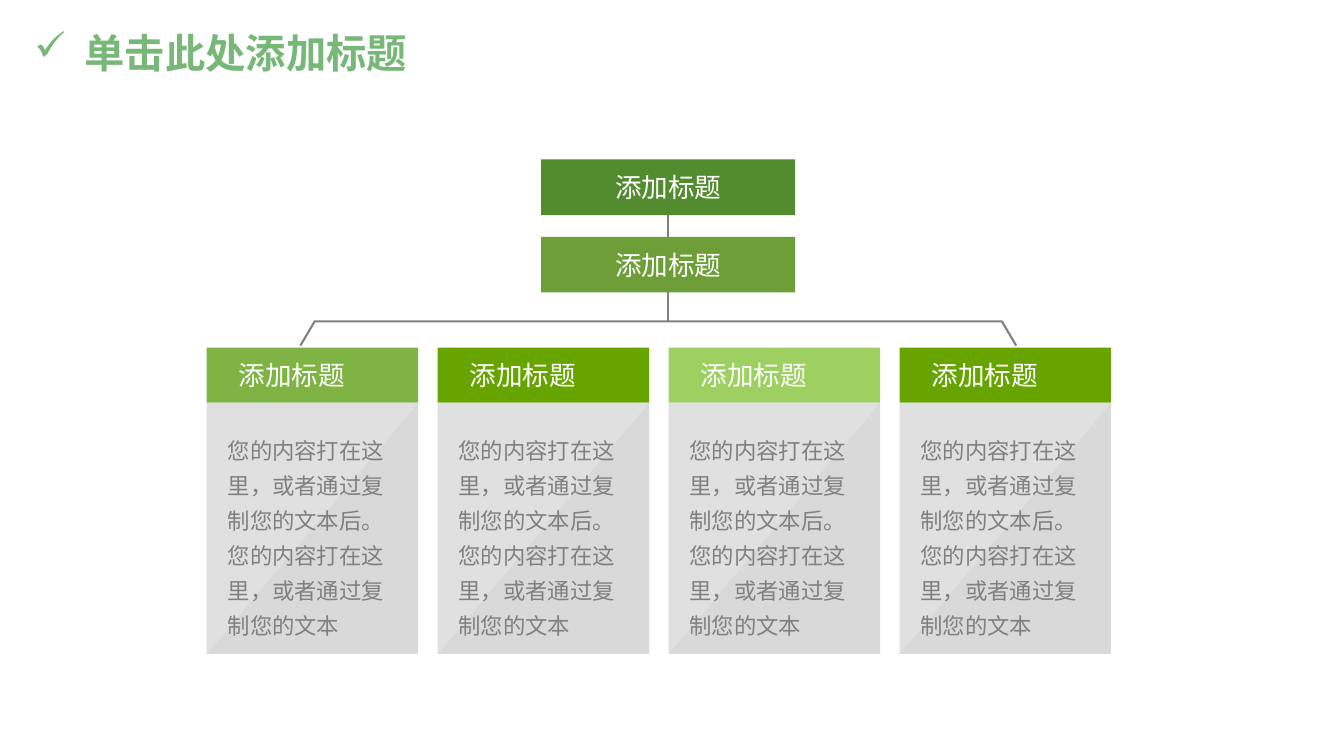
from dataclasses import dataclass

from lxml.etree import SubElement
from pptx import Presentation
from pptx.dml.color import RGBColor
from pptx.enum.shapes import MSO_CONNECTOR, MSO_SHAPE
from pptx.enum.text import MSO_ANCHOR, MSO_AUTO_SIZE, PP_ALIGN
from pptx.oxml.ns import qn
from pptx.util import Cm, Pt


@dataclass(frozen=True)
class Theme:
    title: str = "77B878"
    levels: tuple = ("538C2E", "6D9E38")
    heads: tuple = ("7FB344", "67A400", "9ECF61", "67A400")
    panel: str = "D9D9D9"
    white: str = "FFFFFF"
    grey: str = "808080"
    title_font: str = "Montserrat"
    font: str = "Noto Sans CJK SC"
    title_size: float = 28.8
    head_size: float = 19
    body_size: float = 16
    line_width: float = 1.5


T = Theme()
LABEL = "添加标题"
BODY = "您的内容打在这里，或者通过复制您的文本后。" * 2
BODY = BODY.removesuffix("后。")


def apply(obj, formats):
    for name, value in formats.items():
        setattr(obj, name, value)


def write(tf, text, size, color, font=T.font, bold=False, **paragraph):
    p = tf.paragraphs[0]
    apply(p, paragraph)
    r = p.add_run()
    r.text = text
    apply(r.font, {"size": Pt(size), "name": font, "bold": bold})
    r.font.color.rgb = RGBColor.from_string(color)
    SubElement(r.font._element, qn("a:ea"), typeface=T.font)
    return p


def rectangle(s, x, y, w, h, color):
    sp = s.shapes.add_shape(MSO_SHAPE.RECTANGLE, Cm(x), Cm(y), Cm(w), Cm(h))
    sp.shadow.inherit = False
    sp.fill.solid()
    sp.fill.fore_color.rgb = RGBColor.from_string(color)
    sp.line.fill.background()
    return sp


def outline(s, points, close):
    start, *rest = [(Cm(x), Cm(y)) for x, y in points]
    fb = s.shapes.build_freeform(*start)
    fb.add_line_segments(rest, close=close)
    sp = fb.convert_to_shape()
    sp.shadow.inherit = False
    return sp


def style_line(line):
    line.color.rgb = RGBColor.from_string(T.grey)
    line.width = Pt(T.line_width)


def link(s, upper, lower=None, end_y=0):
    x, y = upper.left + upper.width // 2, upper.top + upper.height
    c = s.shapes.add_connector(MSO_CONNECTOR.STRAIGHT, x, y, x, Cm(end_y))
    c.begin_connect(upper, 2)
    if lower is not None:
        c.end_connect(lower, 0)
    style_line(c.line)
    SubElement(c._element.spPr, qn("a:effectLst"))


def add_title(s, x, y, w, h):
    sp = s.shapes.title
    apply(sp, {"left": Cm(x), "top": Cm(y), "width": Cm(w), "height": Cm(h)})
    tf = sp.text_frame
    apply(tf, {"word_wrap": True, "auto_size": MSO_AUTO_SIZE.NONE,
               "vertical_anchor": MSO_ANCHOR.MIDDLE})
    pPr = tf.paragraphs[0]._p.get_or_add_pPr()
    pPr.set("marL", str(Cm(1.27)))
    pPr.set("indent", str(-Cm(1.27)))
    SubElement(pPr, qn("a:buChar"), char="✓")
    write(tf, "单击此处添加标题", T.title_size, T.title, T.title_font, True,
          alignment=PP_ALIGN.LEFT, line_spacing=0.9)


def add_levels(s, x, y, w, h, pitch, end_y):
    boxes = []
    for i, color in enumerate(T.levels):
        sp = rectangle(s, x, y + i * pitch, w, h, color)
        sp.text_frame.vertical_anchor = MSO_ANCHOR.MIDDLE
        write(sp.text_frame, LABEL, T.head_size, T.white,
              alignment=PP_ALIGN.CENTER)
        boxes.append(sp)
    upper, lower = boxes
    link(s, upper, lower)
    link(s, lower, end_y=end_y)


def add_branch(s, x, y, w, h, slant):
    points = [(x, y + h), (x + slant, y), (x + w - slant, y), (x + w, y + h)]
    sp = outline(s, points, False)
    sp.fill.background()
    style_line(sp.line)


def add_column(s, x, y, w, h, color, head_h=1.39):
    head = rectangle(s, x, y, w, head_h, color)
    apply(head.text_frame, {"margin_left": Cm(0.81), "word_wrap": False,
                            "vertical_anchor": MSO_ANCHOR.MIDDLE})
    write(head.text_frame, LABEL, T.head_size, T.white,
          alignment=PP_ALIGN.LEFT)

    top, bottom = y + head_h, y + h
    rectangle(s, x, top, w, h - head_h, T.panel)
    gleam = outline(s, [(x, bottom), (x + w, top), (x, top)], True)
    gleam.fill.solid()
    gleam.fill.fore_color.rgb = RGBColor.from_string(T.white)
    clr = gleam._element.spPr.find(qn("a:solidFill")).find(qn("a:srgbClr"))
    SubElement(clr, qn("a:alpha"), val="20000")
    gleam.line.fill.background()

    body = s.shapes.add_textbox(Cm(x + 0.28), Cm(top + 0.55),
                                Cm(w - 0.56), Cm(5.6))
    body.text_frame.word_wrap = True
    write(body.text_frame, BODY, T.body_size, T.grey, line_spacing=1.3)


def main():
    prs = Presentation()
    apply(prs, {"slide_width": Cm(33.87), "slide_height": Cm(19.05)})
    s = prs.slides.add_slide(prs.slide_layouts[5])
    add_title(s, 0.61, 0.74, 29.2, 1.3)
    add_branch(s, 7.57, 8.1, 18.04, 0.61, 0.36)
    add_levels(s, 13.64, 4.02, 6.4, 1.4, 1.95, 8.1)
    for i, color in enumerate(T.heads):
        add_column(s, 5.21 + i * 5.82, 8.76, 5.33, 7.72, color)
    prs.save("out.pptx")


if __name__ == "__main__":
    main()
